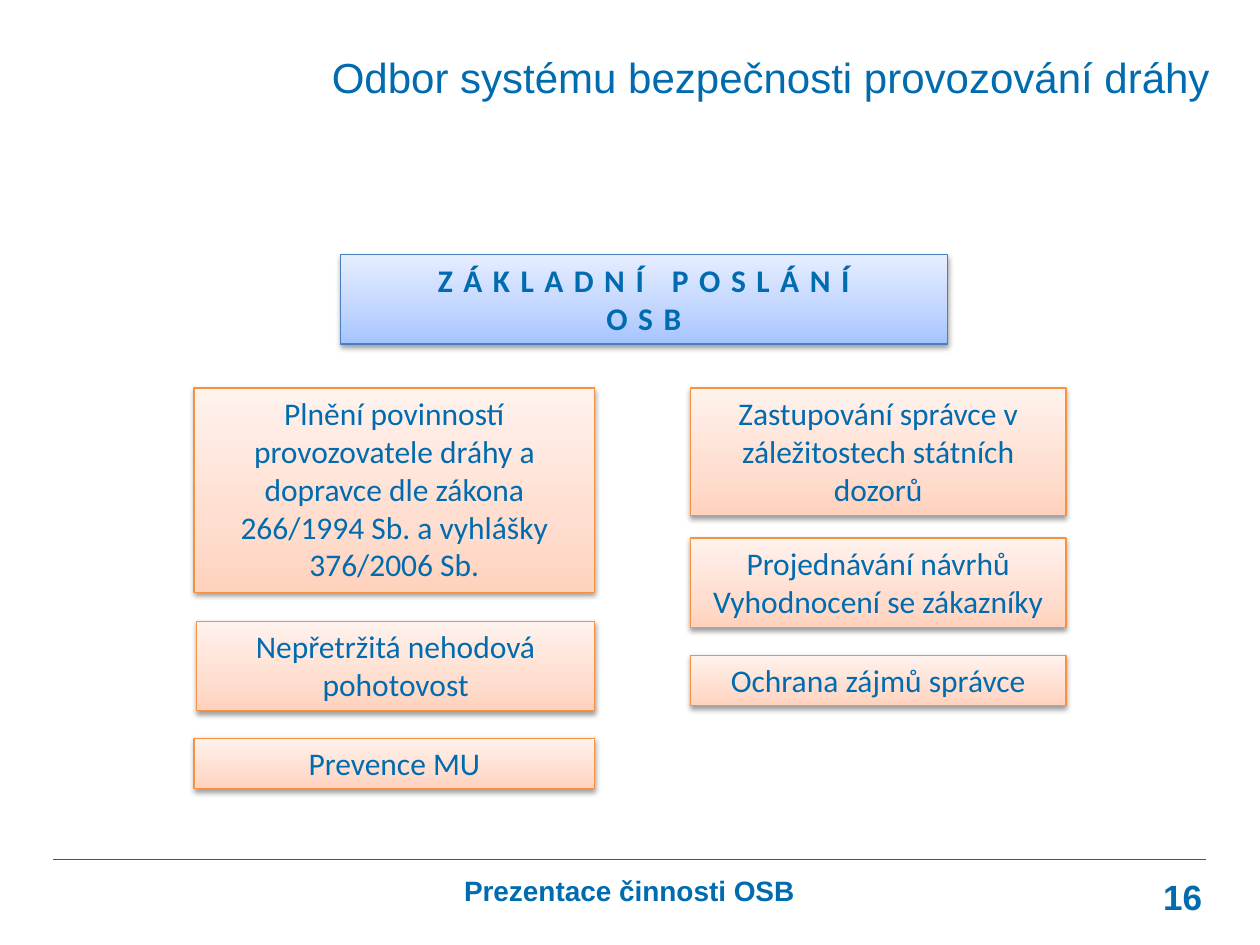
from lxml.etree import SubElement
from pptx import Presentation
from pptx.dml.color import RGBColor
from pptx.enum.shapes import MSO_CONNECTOR, MSO_SHAPE
from pptx.enum.text import MSO_ANCHOR, MSO_AUTO_SIZE, PP_ALIGN
from pptx.oxml import parse_xml
from pptx.oxml.ns import nsdecls, qn
from pptx.util import Inches, Pt

BLUE = "006BAF"
HEADING_STYLE = ("4B7EBC", [(0, "A4C4FF"), (35, "BFD4FF"), (100, "E6EEFF")])
TASK_STYLE = ("F69240", [(0, "FFD2BD"), (35, "FFDED0"), (100, "FFF2ED")])
SHADOW = f"""<a:effectLst {nsdecls('a')}>
  <a:outerShdw blurRad="39370" dist="20320" dir="5400000" rotWithShape="0">
    <a:srgbClr val="000000"><a:alpha val="38000"/></a:srgbClr>
  </a:outerShdw>
</a:effectLst>"""


def color(value):
    return RGBColor.from_string(value)


def write(holder, place, lines, size, font_name, align, bold=False, spacing=0):
    """Place a shape and fill it with one paragraph per line."""
    holder.left, holder.top, holder.width, holder.height = map(Inches, place)
    frame = holder.text_frame
    frame.word_wrap = True
    frame.auto_size = MSO_AUTO_SIZE.NONE
    frame.vertical_anchor = MSO_ANCHOR.TOP
    for index, line in enumerate(lines):
        paragraph = frame.add_paragraph() if index else frame.paragraphs[0]
        paragraph.alignment = align
        paragraph.space_before = Pt(0)
        properties = paragraph._p.get_or_add_pPr()
        properties.set("marL", "0")
        properties.set("indent", "0")
        SubElement(properties, qn("a:buNone"))
        run = paragraph.add_run()
        run.text = line
        run.font.size = Pt(size)
        run.font.name = font_name
        run.font.bold = bold
        run.font.color.rgb = color(BLUE)
        if spacing:
            run._r.get_or_add_rPr().set("spc", str(spacing * 100))


prs = Presentation()
prs.slide_width, prs.slide_height = Inches(10), Inches(7.5)
slide = prs.slides.add_slide(prs.slide_layouts[1])
title, footer = slide.placeholders

write(title, (2.38, 0.36, 7.32, 0.55),
      ["Odbor systému bezpečnosti provozování dráhy"], 24, "Arial", PP_ALIGN.RIGHT)

footer_rule = slide.shapes.add_connector(
    MSO_CONNECTOR.STRAIGHT, Inches(0.42), Inches(6.82), Inches(9.57), Inches(6.82))
footer_rule.line.color.rgb = color("0069AF")
footer_rule.line.width = Pt(0.75)
SubElement(footer_rule._element.spPr, qn("a:effectLst"))

write(footer, (2.83, 6.88, 4.33, 0.39), ["Prezentace činnosti OSB"],
      16, "Arial", PP_ALIGN.CENTER, bold=True)
page_number = slide.shapes.add_textbox(0, 0, 0, 0)
write(page_number, (7.31, 6.9, 2.33, 0.4), ["16"], 20, "Arial", PP_ALIGN.RIGHT, bold=True)

boxes = [
    ((2.7, 2.02, 4.82, 0.71), ["ZÁKLADNÍ POSLÁNÍ", "OSB"], HEADING_STYLE),
    ((1.54, 3.08, 3.18, 1.62),
     ["Plnění povinností provozovatele dráhy a dopravce dle zákona "
      "266/1994 Sb. a vyhlášky 376/2006 Sb."], TASK_STYLE),
    ((1.56, 4.93, 3.16, 0.71), ["Nepřetržitá nehodová pohotovost"], TASK_STYLE),
    ((1.54, 5.86, 3.18, 0.4), ["Prevence MU"], TASK_STYLE),
    ((5.48, 3.08, 2.98, 1.01),
     ["Zastupování správce v záležitostech státních dozorů"], TASK_STYLE),
    ((5.48, 4.27, 2.98, 0.71),
     ["Projednávání návrhů Vyhodnocení se zákazníky"], TASK_STYLE),
    ((5.48, 5.2, 2.98, 0.4), ["Ochrana zájmů správce"], TASK_STYLE),
]
for place, lines, (border, stops) in boxes:
    box = slide.shapes.add_shape(MSO_SHAPE.RECTANGLE, 0, 0, 0, 0)
    is_heading = border == HEADING_STYLE[0]
    write(box, place, lines, 18, "Calibri", PP_ALIGN.CENTER,
          bold=is_heading, spacing=6 if is_heading else 0)
    box.line.color.rgb = color(border)
    box.line.width = Pt(0.75)
    box.fill.gradient()
    box.fill.gradient_angle = 90
    properties = box._element.spPr
    stop_list = properties.find(".//" + qn("a:gsLst"))
    for old_stop in list(stop_list):
        stop_list.remove(old_stop)
    for position, shade in stops:
        stop = SubElement(stop_list, qn("a:gs"), pos=str(position * 1000))
        SubElement(stop, qn("a:srgbClr"), val=shade)
    properties.append(parse_xml(SHADOW))

prs.save("out.pptx")
